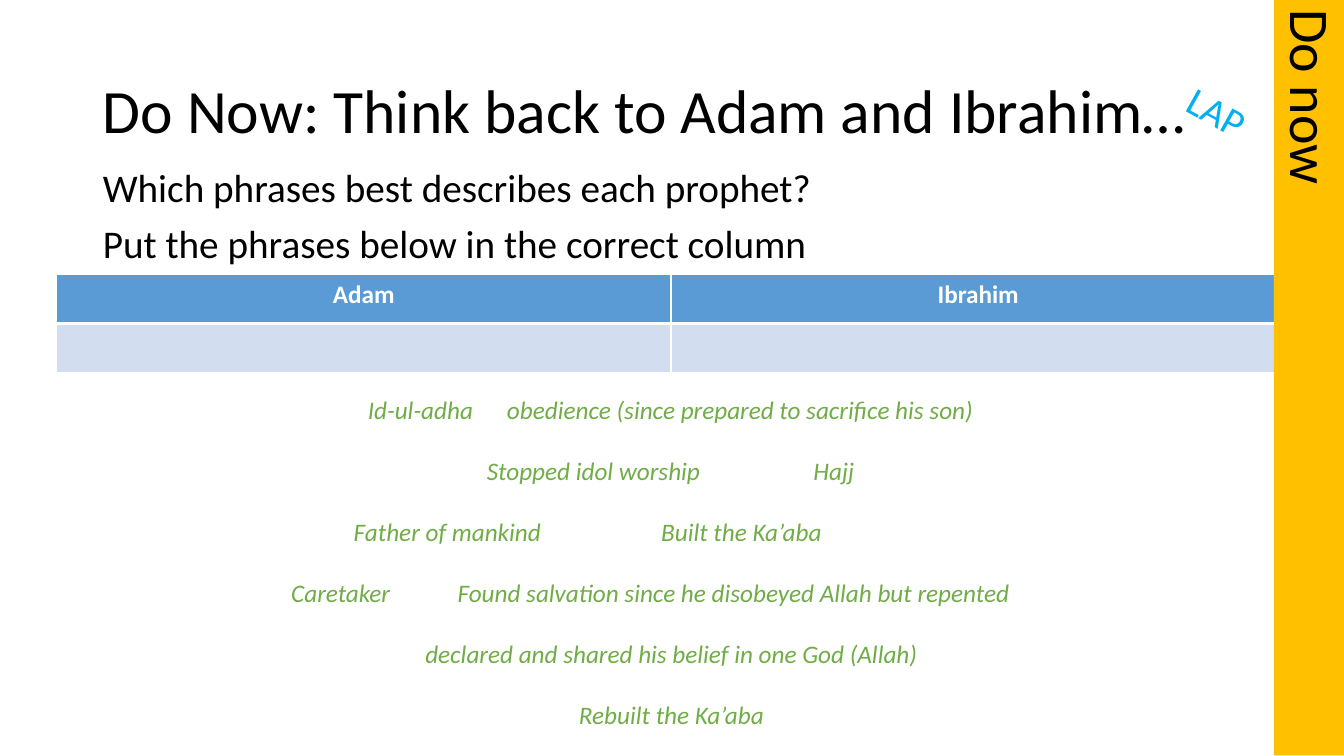
from dataclasses import dataclass

import pptx
import pptx.dml.color
import pptx.enum.shapes
import pptx.enum.text
import pptx.oxml
import pptx.oxml.ns
import pptx.util
from pptx.util import Inches

ALIGN = pptx.enum.text.PP_ALIGN
ANCHOR = pptx.enum.text.MSO_ANCHOR
FIT = pptx.enum.text.MSO_AUTO_SIZE


@dataclass(frozen=True)
class Theme:
    font: str = "Calibri"
    black: str = "000000"
    white: str = "FFFFFF"
    blue: str = "5B9BD5"
    pale_blue: str = "D2DEEF"
    sky: str = "00B0F0"
    green: str = "70AD47"
    amber: str = "FFC000"
    title_size: int = 44
    banner_size: int = 40
    body_size: int = 28
    phrase_size: int = 18


THEME = Theme()
PHRASES_LEFT = 0.44
INSET = 0.1
PHRASES = [
    (("Id-ul-adha", 3.65), ("obedience (since prepared to sacrifice his son)", 5.03)),
    (("Stopped idol worship", 4.83), ("Hajj", 8.07)),
    (("Father of mankind", 3.51), ("Built the Ka’aba", 6.56)),
    (("Caretaker", 2.89),
     ("Found salvation since he disobeyed Allah but repented", 4.54)),
    "declared and shared his belief in one God (Allah)",
    "Rebuilt the Ka’aba",
]


def color(value):
    return pptx.dml.color.RGBColor.from_string(value)


def add_xml(parent, tag, content="", **attributes):
    pairs = " ".join(f'{name}="{value}"' for name, value in attributes.items())
    namespace = pptx.oxml.ns.nsdecls("a")
    element = pptx.oxml.parse_xml(
        f"<a:{tag} {namespace} {pairs}>{content}</a:{tag}>")
    parent.append(element)


def place(shape, left, top, width, height):
    shape.left, shape.top = Inches(left), Inches(top)
    shape.width, shape.height = Inches(width), Inches(height)


def format_paragraph(para, size, hue, align=ALIGN.LEFT, bold=False, italic=False):
    para.alignment = align
    para.font.name = THEME.font
    para.font.size = pptx.util.Pt(size)
    para.font.color.rgb = color(hue)
    para.font.bold = bold
    para.font.italic = italic


def fill_placeholder(shape, bounds, lines, size, anchor, space_before=0):
    place(shape, *bounds)
    frame = shape.text_frame
    frame.text = "\n".join(lines)
    frame.auto_size = FIT.NONE
    frame.vertical_anchor = anchor
    for para in frame.paragraphs:
        format_paragraph(para, size, THEME.black)
        para.line_spacing = 0.9
        para.space_before = pptx.util.Pt(space_before)
        properties = para._p.get_or_add_pPr()
        properties.set("marL", "0")
        properties.set("indent", "0")
        add_xml(properties, "buNone")
        properties.append(properties.find(pptx.oxml.ns.qn("a:defRPr")))


def add_text_box(page, left, top, width, height):
    box = page.shapes.add_textbox(
        Inches(left), Inches(top), Inches(width), Inches(height))
    box.text_frame.word_wrap = True
    return box


def add_label(page):
    box = add_text_box(page, 11.6, 1.12, 2.04, 0.57)
    box.rotation = 29
    box.text_frame.text = "LAP"
    format_paragraph(box.text_frame.paragraphs[0], THEME.body_size, THEME.sky)


def set_cell_borders(cell, bottom_width):
    properties = cell._tc.get_or_add_tcPr()
    line_fill = f'<a:solidFill><a:srgbClr val="{THEME.white}"/></a:solidFill>'
    for tag, width in (("lnL", 1), ("lnR", 1), ("lnT", 1), ("lnB", bottom_width)):
        add_xml(properties, tag, line_fill, w=pptx.util.Pt(width))


def add_prophet_table(page):
    prophets = ("Adam", "Ibrahim")
    frame = page.shapes.add_table(
        2, len(prophets), Inches(0.56), Inches(2.72), Inches(12.19), Inches(0.98))
    table = frame.table
    table.horz_banding = False
    rows = ((prophets, THEME.blue, 3), (("", ""), THEME.pale_blue, 1))
    for row, (texts, fill, bottom_width) in enumerate(rows):
        table.rows[row].height = Inches(0.49)
        for column, text in enumerate(texts):
            cell = table.cell(row, column)
            cell.text = text
            format_paragraph(cell.text_frame.paragraphs[0], THEME.phrase_size,
                             THEME.white, ALIGN.CENTER, bold=True)
            set_cell_borders(cell, bottom_width)
            cell.fill.solid()
            cell.fill.fore_color.rgb = color(fill)


def set_tab_stops(para, positions):
    stops = "".join(
        f'<a:tab pos="{Inches(position - PHRASES_LEFT - INSET)}" algn="l"/>'
        for position in positions)
    properties = para._p.get_or_add_pPr()
    add_xml(properties, "tabLst", stops)
    properties.append(properties.find(pptx.oxml.ns.qn("a:defRPr")))


def add_phrases(page):
    frame = add_text_box(page, PHRASES_LEFT, 3.86, 12.44, 3.64).text_frame
    for index, phrase in enumerate(PHRASES):
        para = frame.add_paragraph() if index else frame.paragraphs[0]
        centred = isinstance(phrase, str)
        format_paragraph(para, THEME.phrase_size, THEME.green,
                         ALIGN.CENTER if centred else ALIGN.LEFT, italic=True)
        para.space_before = pptx.util.Pt(22 if index else 0)
        if centred:
            para.text = phrase
        else:
            para.text = "".join(f"\t{text}" for text, position in phrase)
            set_tab_stops(para, [position for text, position in phrase])


def add_banner(page):
    banner = page.shapes.add_shape(
        pptx.enum.shapes.MSO_SHAPE.RECTANGLE,
        Inches(9.27), Inches(3.36), Inches(7.5), Inches(0.77))
    banner.rotation = 90
    banner.shadow.inherit = False
    banner.fill.solid()
    banner.fill.fore_color.rgb = color(THEME.amber)
    banner.line.fill.background()
    banner.text_frame.text = "Do now"
    banner.text_frame.vertical_anchor = ANCHOR.TOP
    format_paragraph(banner.text_frame.paragraphs[0], THEME.banner_size, THEME.black)


def main():
    deck = pptx.Presentation()
    deck.slide_width, deck.slide_height = Inches(13.33), Inches(7.5)
    page = deck.slides.add_slide(deck.slide_layouts[1])
    fill_placeholder(page.shapes.title, (0.92, 0.4, 11.5, 1.45),
                     ["Do Now: Think back to Adam and Ibrahim…"],
                     THEME.title_size, ANCHOR.MIDDLE)
    fill_placeholder(page.placeholders[1], (0.92, 1.62, 11.5, 1.14),
                     ["Which phrases best describes each prophet?",
                      "Put the phrases below in the correct column"],
                     THEME.body_size, ANCHOR.TOP, space_before=10)
    add_label(page)
    add_prophet_table(page)
    add_phrases(page)
    add_banner(page)
    deck.save("out.pptx")


if __name__ == "__main__":
    main()
